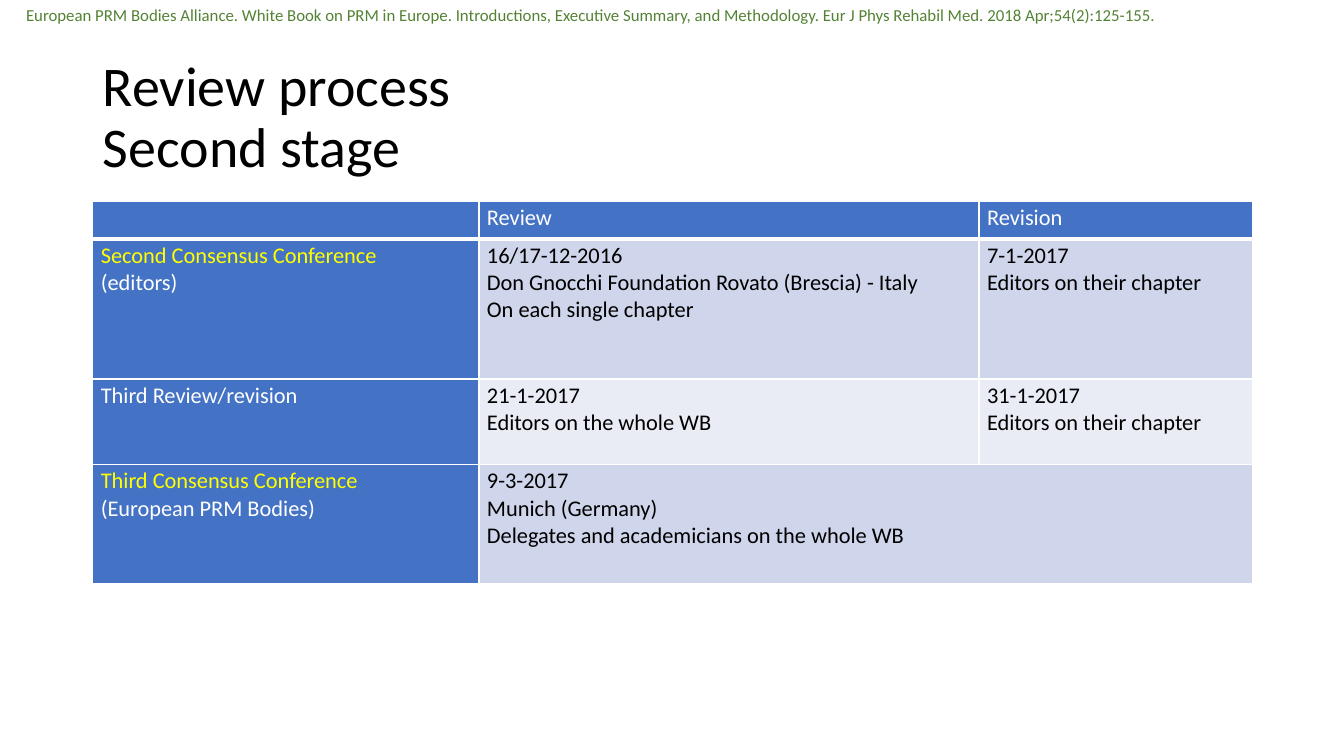
"""Build the review process slide."""
from dataclasses import dataclass

from lxml.etree import SubElement
from pptx import Presentation
from pptx.dml.color import RGBColor
from pptx.enum.text import MSO_ANCHOR, MSO_AUTO_SIZE, PP_ALIGN
from pptx.oxml.ns import qn
from pptx.util import Inches, Pt


@dataclass(frozen=True)
class Theme:
    font: str = "Calibri"
    citation_size: int = 12
    title_size: int = 40
    table_size: int = 16
    black: str = "000000"
    white: str = "FFFFFF"
    green: str = "548235"
    yellow: str = "FFFF00"
    blue: str = "4472C4"
    bands: tuple = ("CFD5EA", "E9EBF5")
    rule: int = 1
    header_rule: int = 3


def write(paragraph, text, font, size, color, align=PP_ALIGN.LEFT, spacing=None):
    paragraph.text = text
    paragraph.alignment = align
    paragraph.line_spacing = spacing
    for target in (paragraph.font, *(span.font for span in paragraph.runs)):
        target.name = font
        target.size = Pt(size)
        target.color.rgb = RGBColor.from_string(color)


class SlideBuilder:
    def __init__(self, deck, theme):
        self.theme = theme
        self.page = deck.slides.add_slide(deck.slide_layouts[5])

    def place(self, box, left, top, width, height):
        box.left, box.top = Inches(left), Inches(top)
        box.width, box.height = Inches(width), Inches(height)

    def title(self, text, *bounds):
        box = self.page.shapes.title
        self.place(box, *bounds)
        frame = box.text_frame
        frame.word_wrap = True
        frame.auto_size = MSO_AUTO_SIZE.NONE
        frame.vertical_anchor = MSO_ANCHOR.MIDDLE
        write(frame.paragraphs[0], text, self.theme.font, self.theme.title_size,
              self.theme.black, spacing=0.9)

    def citation(self, text, *bounds):
        box = self.page.shapes.add_textbox(*map(Inches, bounds))
        frame = box.text_frame
        frame.word_wrap = True
        frame.auto_size = MSO_AUTO_SIZE.SHAPE_TO_FIT_TEXT
        write(frame.paragraphs[0], text, self.theme.font, self.theme.citation_size,
              self.theme.green)

    def borders(self, cell, bottom):
        properties = cell._tc.get_or_add_tcPr()
        for side in ("lnL", "lnR", "lnT", "lnB"):
            width = bottom if side == "lnB" else self.theme.rule
            line = SubElement(properties, qn(f"a:{side}"), w=str(Pt(width)))
            SubElement(SubElement(line, qn("a:solidFill")), qn("a:srgbClr"),
                       val=self.theme.white)

    def cell(self, cell, lines, fill, colors, bottom):
        self.borders(cell, bottom)
        cell.fill.solid()
        cell.fill.fore_color.rgb = RGBColor.from_string(fill)
        cell.margin_left = cell.margin_right = Inches(0.08)
        cell.margin_top = cell.margin_bottom = Inches(0.03)
        frame = cell.text_frame
        for index, text in enumerate(lines):
            paragraph = frame.add_paragraph() if index else frame.paragraphs[0]
            write(paragraph, text, self.theme.font, self.theme.table_size,
                  colors[min(index, len(colors) - 1)], PP_ALIGN.JUSTIFY)

    def table(self, rows, left, top, widths, heights):
        theme = self.theme
        bounds = map(Inches, (left, top, sum(widths), sum(heights)))
        table = self.page.shapes.add_table(len(rows), len(widths), *bounds).table
        for column, width in zip(table.columns, widths):
            column.width = Inches(width)
        for row, height in zip(table.rows, heights):
            row.height = Inches(height)
        for r, row in enumerate(rows):
            for c, lines in enumerate(row):
                heading = r == 0 or c == 0
                fill = theme.blue if heading else theme.bands[(r - 1) % 2]
                colors = (theme.white,) if heading else (theme.black,)
                if c == 0 and len(lines) > 1:
                    colors = (theme.yellow, theme.white)
                bottom = theme.rule if r else theme.header_rule
                self.cell(table.cell(r, c), lines, fill, colors, bottom)
        return table


def main():
    deck = Presentation()
    deck.slide_width, deck.slide_height = Inches(13.33), Inches(7.5)
    slide = SlideBuilder(deck, Theme())
    slide.citation(
        "European PRM Bodies Alliance. White Book on PRM in Europe. Introductions, "
        "Executive Summary, and Methodology. Eur J Phys Rehabil Med. "
        "2018 Apr;54(2):125-155.", 0.16, 0, 13.17, 0.3)
    slide.title("Review process\vSecond stage", 0.92, 0.51, 11.5, 1.34)
    stages = [
        [[""], ["Review"], ["Revision"]],
        [["Second Consensus Conference", "(editors)"],
         ["16/17-12-2016", "Don Gnocchi Foundation Rovato (Brescia) - Italy",
          "On each single chapter"],
         ["7-1-2017", "Editors on their chapter"]],
        [["Third Review/revision"],
         ["21-1-2017", "Editors on the whole WB"],
         ["31-1-2017", "Editors on their chapter"]],
        [["Third Consensus Conference", "(European PRM Bodies)"],
         ["9-3-2017", "Munich (Germany)",
          "Delegates and academicians on the whole WB"],
         [""]],
    ]
    table = slide.table(stages, 0.92, 2, (3.83, 4.96, 2.71), (0.37, 1.39, 0.85, 1.18))
    table.cell(3, 1).merge(table.cell(3, 2))
    deck.save("out.pptx")


if __name__ == "__main__":
    main()
